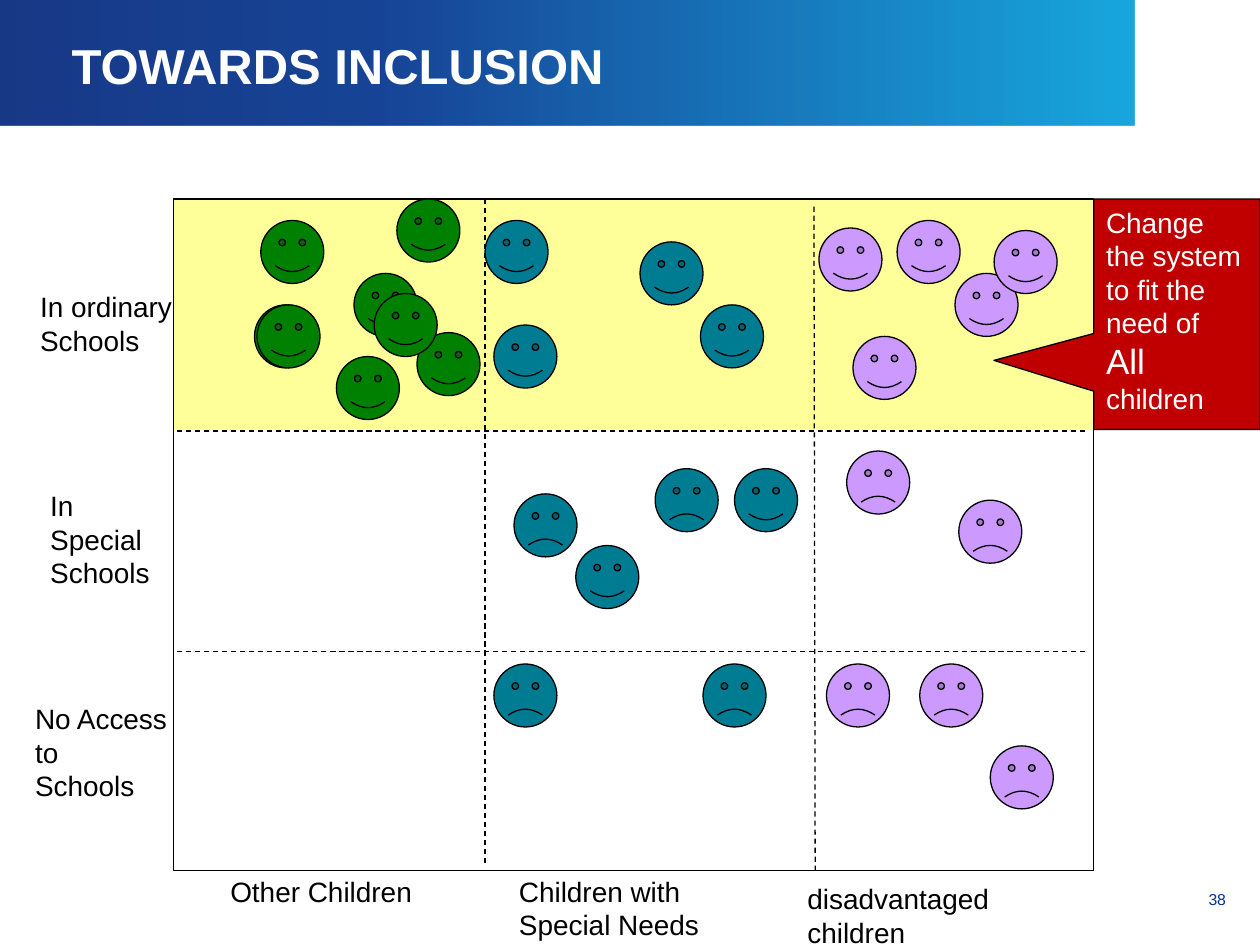
import lxml.etree
import pptx
import pptx.dml.color
import pptx.enum.dml
import pptx.enum.shapes
import pptx.enum.text
import pptx.oxml.ns
import pptx.util

Inches = pptx.util.Inches
Pt = pptx.util.Pt
Shape = pptx.enum.shapes.MSO_SHAPE
qn = pptx.oxml.ns.qn

COLORS = {
    "black": "000000", "white": "FFFFFF", "navy": "00257A", "blue": "00338D",
    "sky": "009FDA", "yellow": "FFFF99", "green": "008000", "teal": "007C92",
    "lilac": "CC99FF", "red": "C00000",
}
FACE_SIZE = 0.5
SMILE = 0.047
LEFT, TOP, WIDTH, HEIGHT = 1.38, 1.58, 7.3, 5.33
ROW_HEIGHT = 1.83

DIVIDERS = [
    (6.46, 1.64, 6.47, 6.92),
    (3.85, TOP, 3.85, 6.86),
    (8.61, 5.17, LEFT, 5.17),
    (8.61, 3.42, LEFT, 3.42),
]
# Left, top, width, height, text; \v is a line break within a paragraph
LABELS = [
    (0.22, 2.25, 1.26, 0.64, "In ordinary\nSchools"),
    (0.3, 3.83, 1.11, 0.64, "In\vSpecial\nSchools"),
    (0.18, 5.52, 1.42, 0.64, "No Access\vto\nSchools"),
    (1.73, 6.89, 1.93, 0.37, "Other Children"),
    (4.02, 6.89, 1.92, 0.64, "Children with Special Needs"),
    (6.31, 6.95, 2.46, 0.64, "disadvantaged\vchildren"),
]
HAPPY = {
    "green": [(3.31, 2.64), (3.15, 1.58), (2.02, 2.42), (2.67, 2.83), (2.07, 1.75),
              (2.81, 2.17), (2.04, 2.42), (2.97, 2.33)],
    "teal": [(3.85, 1.75), (5.08, 1.92), (3.92, 2.58), (5.56, 2.42),
             (4.57, 4.33), (5.83, 3.72)],
    "lilac": [(6.5, 1.81), (6.77, 2.67), (7.12, 1.75), (7.58, 2.17), (7.89, 1.83)],
}
SAD = {
    "teal": [(5.58, 5.27), (3.92, 5.27), (5.2, 3.72), (4.08, 3.92)],
    "lilac": [(7.3, 5.27), (6.72, 3.58), (7.86, 5.92), (7.61, 3.97), (6.56, 5.27)],
}


def rgb(color):
    return pptx.dml.color.RGBColor.from_string(COLORS[color])


def apply(target, values):
    for name, value in values.items():
        setattr(target, name, value)


class Painter:
    """Holds the text and line style together with the current slide."""

    font = "Arial"
    text_size = 16
    line_width = 0.75

    def __init__(self, slide):
        self.slide = slide

    def outline(self, line):
        line.color.rgb = rgb("black")
        line.width = Pt(self.line_width)

    def shape(self, kind, box, fill=None, outlined=True):
        shape = self.slide.shapes.add_shape(kind, *map(Inches, box))
        shape.shadow.inherit = False
        if fill:
            shape.fill.solid()
            shape.fill.fore_color.rgb = rgb(fill)
        else:
            shape.fill.background()
        if outlined:
            self.outline(shape.line)
        else:
            shape.line.fill.background()
        return shape

    def face(self, left, top, color, curve):
        face = self.shape(Shape.SMILEY_FACE, (left, top, FACE_SIZE, FACE_SIZE), color)
        face.adjustments[0] = curve

    def divider(self, *ends):
        divider = self.slide.shapes.add_connector(
            pptx.enum.shapes.MSO_CONNECTOR.STRAIGHT, *map(Inches, ends))
        self.outline(divider.line)
        divider.line.dash_style = pptx.enum.dml.MSO_LINE.DASH
        lxml.etree.SubElement(divider._element.spPr, qn("a:effectLst"))

    def fill_text(self, frame, text, color="black", align="LEFT", size=None, bold=False,
                  **frame_values):
        apply(frame, {"word_wrap": True, "text": text,
                      "vertical_anchor": pptx.enum.text.MSO_ANCHOR.TOP, **frame_values})
        for paragraph in frame.paragraphs:
            paragraph.alignment = getattr(pptx.enum.text.PP_ALIGN, align)
            for run in paragraph.runs:
                apply(run.font, {"name": self.font, "size": Pt(size or self.text_size), "bold": bold})
                run.font.color.rgb = rgb(color)

    def text(self, box, text, **style):
        self.fill_text(self.slide.shapes.add_textbox(*map(Inches, box)).text_frame, text, **style)

    def banner(self, corners, stops):
        """Draw a polygon with a left-to-right gradient at 90 % opacity."""
        (start_x, start_y), *others = corners
        builder = self.slide.shapes.build_freeform(start_x, start_y, scale=Inches(1))
        builder.add_line_segments(others, close=True)
        banner = builder.convert_to_shape()
        banner.shadow.inherit = False
        banner.line.fill.background()
        banner.fill.gradient()
        banner.fill.gradient_angle = 0
        stop_list = banner._element.spPr.find(qn("a:gradFill")).find(qn("a:gsLst"))
        for old_stop in list(stop_list):
            stop_list.remove(old_stop)
        for percent, color in stops:
            stop = lxml.etree.SubElement(stop_list, qn("a:gs"), pos=str(percent * 1000))
            tint = lxml.etree.SubElement(stop, qn("a:srgbClr"), val=COLORS[color])
            lxml.etree.SubElement(tint, qn("a:alpha"), val="90000")


def main():
    deck = pptx.Presentation()
    deck.slide_width, deck.slide_height = Inches(10), Inches(7.5)
    painter = Painter(deck.slides.add_slide(deck.slide_layouts[6]))

    painter.banner([(9.23, 0), (0, 0), (0, 1.06), (8.98, 1.06)],
                   [(0, "navy"), (35, "blue"), (100, "sky")])
    painter.text((0.47, 0.23, 4.43, 0.57), "TOWARDS INCLUSION", color="white",
                 size=28, bold=True, margin_right=0)
    painter.text((9.22, 6.98, 0.51, 0.31), "38", color="blue", size=9, align="RIGHT",
                 margin_left=Inches(0.08), margin_top=Inches(0.08),
                 margin_right=0, margin_bottom=0)

    painter.shape(Shape.RECTANGLE, (LEFT, TOP, WIDTH, ROW_HEIGHT), "yellow", outlined=False)
    painter.shape(Shape.RECTANGLE, (LEFT, TOP, WIDTH, HEIGHT))
    for ends in DIVIDERS:
        painter.divider(*ends)
    for *box, label in LABELS:
        painter.text(box, label, margin_right=0)

    for groups, curve in ((SAD, -SMILE), (HAPPY, SMILE)):
        for color, places in groups.items():
            for left, top in places:
                painter.face(left, top, color, curve)

    callout = painter.shape(Shape.RECTANGULAR_CALLOUT,
                            (LEFT + WIDTH, TOP, 1.32, ROW_HEIGHT), "red")
    callout.adjustments[0], callout.adjustments[1] = -1.1, 0.2
    painter.fill_text(callout.text_frame,
                      "Change\vthe system\vto fit the\vneed of\vAll\nchildren", color="white")
    callout.text_frame.paragraphs[0].runs[-1].font.size = Pt(20)

    deck.save("out.pptx")


if __name__ == "__main__":
    main()
